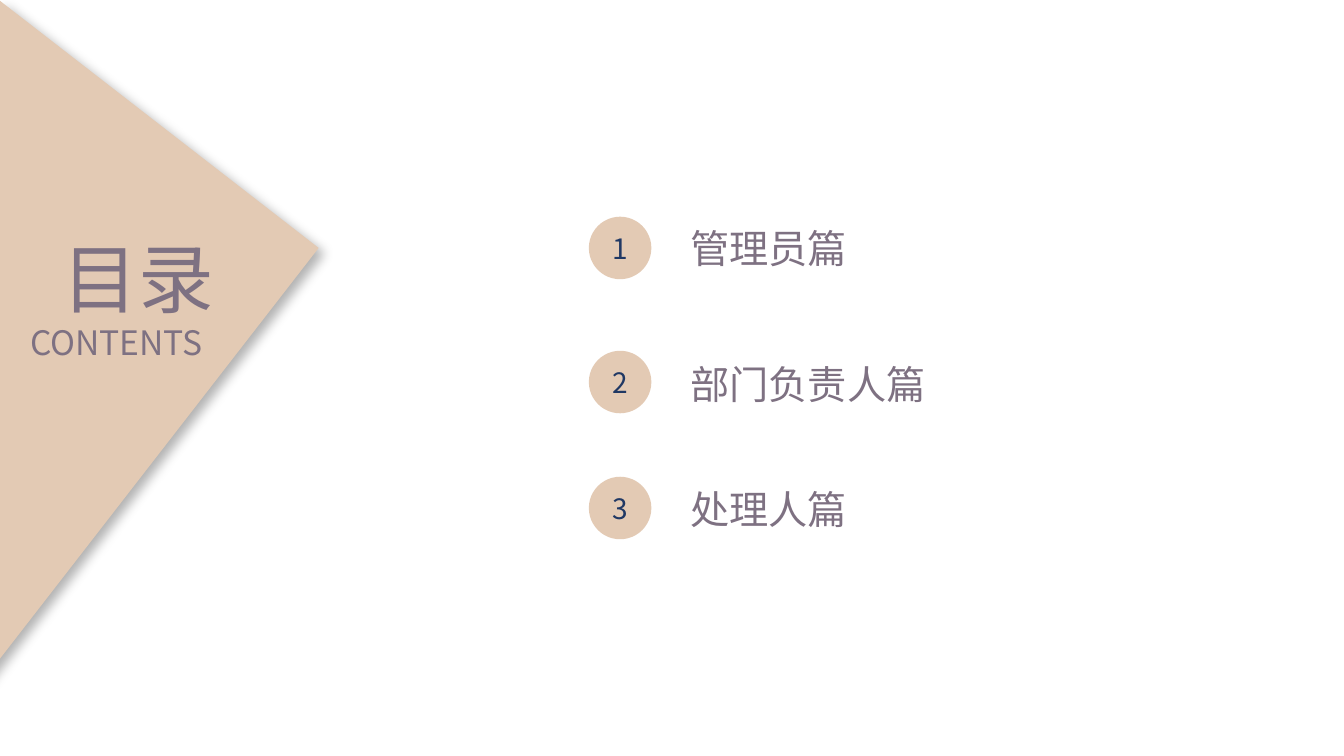
from pptx import Presentation
from pptx.dml.color import RGBColor
from pptx.enum.shapes import MSO_SHAPE
from pptx.enum.text import MSO_ANCHOR, MSO_AUTO_SIZE, PP_ALIGN
from pptx.oxml import parse_xml
from pptx.oxml.ns import qn
from pptx.util import Inches, Pt
from lxml.etree import SubElement

COLORS = {"sand": "E3CAB4", "mauve": "7E7182", "navy": "203864"}
FONT = "Noto Sans CJK SC"
SHADOW = """<a:effectLst xmlns:a="http://schemas.openxmlformats.org/drawingml/2006/main">
<a:outerShdw blurRad="101600" dist="76200" dir="2700000" algn="tl" rotWithShape="0">
<a:srgbClr val="000000"><a:alpha val="30000"/></a:srgbClr>
</a:outerShdw></a:effectLst>"""


def write(shape, text, size, color, align=PP_ALIGN.LEFT, anchor=MSO_ANCHOR.TOP):
    frame = shape.text_frame
    frame.text = text
    frame.vertical_anchor = anchor
    frame.word_wrap = False
    para = frame.paragraphs[0]
    para.alignment = align
    font = para.runs[0].font
    font.size = Pt(size)
    font.name = FONT
    font.color.rgb = RGBColor.from_string(COLORS[color])
    SubElement(font._element, qn("a:ea")).set("typeface", FONT)


def paint(shape):
    shape.shadow.inherit = False
    shape.fill.solid()
    shape.fill.fore_color.rgb = RGBColor.from_string(COLORS["sand"])
    shape.line.fill.background()


deck = Presentation()
deck.slide_width = Inches(13.33)
deck.slide_height = Inches(7.5)
slide = deck.slides.add_slide(deck.slide_layouts[5])
shapes = slide.shapes

wedge = shapes.add_shape(MSO_SHAPE.RIGHT_TRIANGLE, Inches(-3.19), Inches(1.56),
                         Inches(5.91), Inches(4.01))
paint(wedge)
wedge.rotation = 127.8
props = wedge._element.spPr
props.find(qn("a:xfrm")).set("flipV", "1")
props.replace(props.find(qn("a:effectLst")), parse_xml(SHADOW))

title = shapes.title
title._element.addprevious(wedge._element)
title.left, title.top = Inches(0.52), Inches(2.25)
title.width, title.height = Inches(1.72), Inches(1.01)
write(title, "目录", 54, "mauve")
title.text_frame.auto_size = MSO_AUTO_SIZE.SHAPE_TO_FIT_TEXT

labels = [
    ("CONTENTS", 0.2, 3.14, 2.05, 0.5, 24),
    ("管理员篇", 6.75, 2.18, 1.77, 0.57, 28),
    ("部门负责人篇", 6.75, 3.53, 2.56, 0.57, 28),
    ("处理人篇", 6.75, 4.77, 1.77, 0.57, 28),
]
for text, left, top, width, height, size in labels:
    box = shapes.add_textbox(Inches(left), Inches(top), Inches(width), Inches(height))
    write(box, text, size, "mauve")
    box.text_frame.auto_size = MSO_AUTO_SIZE.SHAPE_TO_FIT_TEXT

for number, top in enumerate([2.15, 3.48, 4.73], 1):
    disc = shapes.add_shape(MSO_SHAPE.OVAL, Inches(5.84), Inches(top),
                            Inches(0.62), Inches(0.62))
    paint(disc)
    write(disc, str(number), 20, "navy", PP_ALIGN.CENTER, MSO_ANCHOR.MIDDLE)

deck.save("out.pptx")
